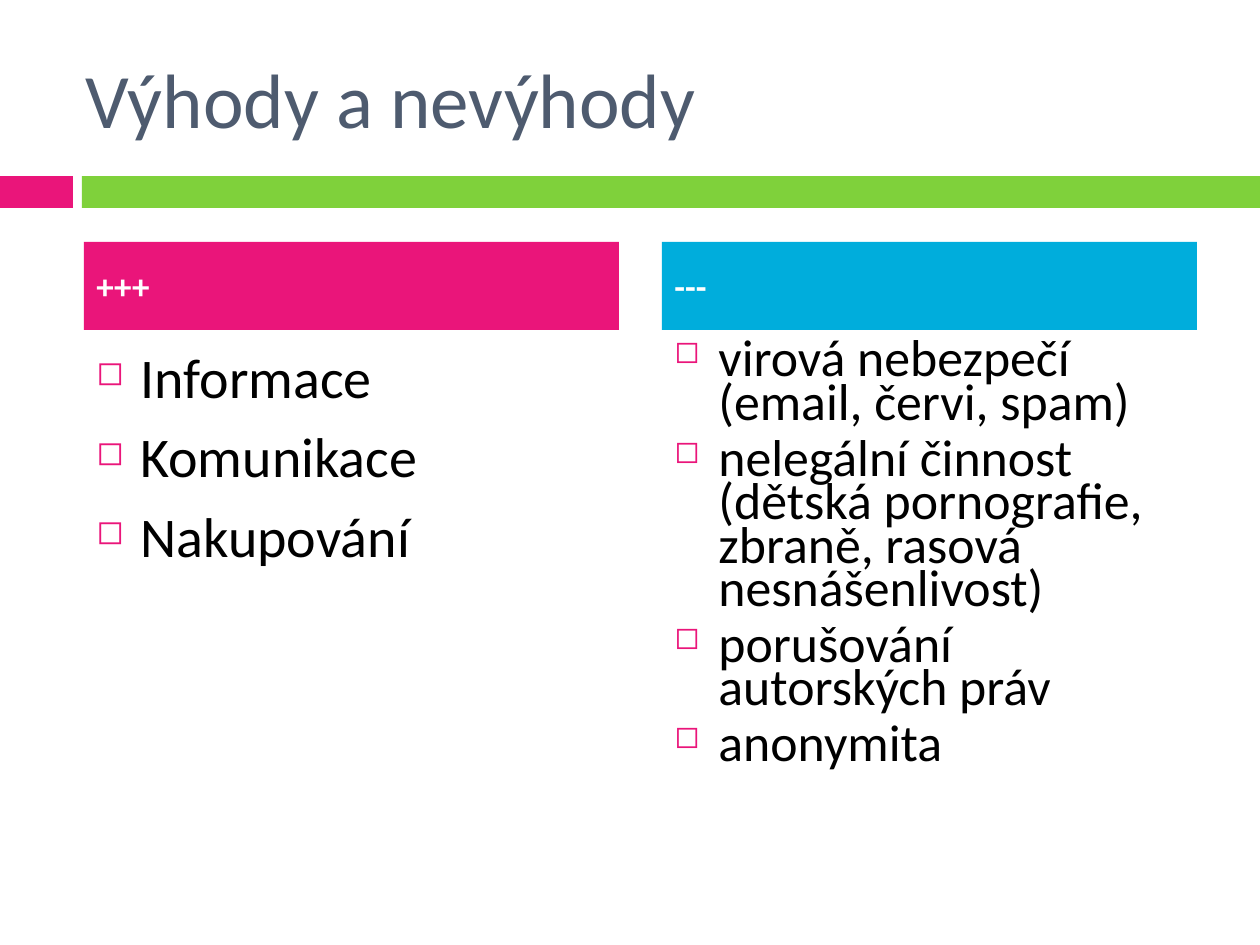
from dataclasses import dataclass

from lxml import etree
from pptx import Presentation
from pptx import util as u
from pptx.dml.color import RGBColor
from pptx.enum import shapes, text
from pptx.oxml.ns import qn

EMU_PER_PX = 914400 / 126
FONT = "Calibri"
PINK = RGBColor(0xEA, 0x15, 0x7A)
GREEN = RGBColor(0x7F, 0xD1, 0x3B)
BLUE = RGBColor(0x00, 0xAD, 0xDC)
SLATE = RGBColor(0x4E, 0x5B, 0x6F)
BLACK = RGBColor(0, 0, 0)
WHITE = RGBColor(255, 255, 255)

COLUMN_WIDTH = 535
HEADER_TOP, HEADER_HEIGHT = 242, 88
BODY_TOP, BODY_HEIGHT = 336, 494
BULLET_INDENT = 44


@dataclass(frozen=True)
class Box:
    left: int
    top: int
    width: int
    height: int

    def emu(self) -> list[int]:
        return [px(side) for side in (self.left, self.top, self.width, self.height)]


@dataclass(frozen=True)
class TextStyle:
    size: float
    color: RGBColor
    bold: bool = False
    space_before: int = 0
    line_spacing: float = 1.0
    bulleted: bool = False


@dataclass(frozen=True)
class Column:
    left: int
    color: RGBColor
    header: str
    items: tuple[str, ...]
    style: TextStyle


TITLE_STYLE = TextStyle(44, SLATE)
HEADER_STYLE = TextStyle(20, WHITE, bold=True, space_before=7)
BARS = (
    (Box(0, 176, 73, 32), PINK),
    (Box(82, 176, 1178, 32), GREEN),
)
COLUMNS = (
    Column(
        84, PINK, "+++",
        ("Informace", "Komunikace", "Nakupování"),
        TextStyle(32, BLACK, space_before=7, bulleted=True),
    ),
    Column(
        662, BLUE, "---",
        (
            "virová nebezpečí (email, červi, spam)",
            "nelegální činnost (dětská pornografie, zbraně, rasová nesnášenlivost)",
            "porušování autorských práv",
            "anonymita",
        ),
        TextStyle(29.6, BLACK, space_before=7, line_spacing=0.7, bulleted=True),
    ),
)


def px(length: int) -> int:
    return round(length * EMU_PER_PX)


def add_bullet(paragraph) -> None:
    properties = paragraph._p.get_or_add_pPr()
    properties.set("marL", str(px(BULLET_INDENT)))
    properties.set("indent", str(-px(BULLET_INDENT)))
    color = etree.SubElement(properties, qn("a:buClr"))
    etree.SubElement(color, qn("a:srgbClr"), val=str(PINK))
    etree.SubElement(properties, qn("a:buSzPct"), val="60000")
    etree.SubElement(properties, qn("a:buChar"), char="◻")


def write_text(shape, lines: tuple[str, ...], style: TextStyle, anchor) -> None:
    frame = shape.text_frame
    frame.word_wrap = True
    frame.vertical_anchor = anchor
    for index, line in enumerate(lines):
        paragraph = frame.add_paragraph() if index else frame.paragraphs[0]
        paragraph.alignment = text.PP_ALIGN.LEFT
        paragraph.space_before = u.Pt(style.space_before)
        paragraph.line_spacing = style.line_spacing
        if style.bulleted:
            add_bullet(paragraph)
        run = paragraph.add_run()
        run.text = line
        run.font.name = FONT
        run.font.size = u.Pt(style.size)
        run.font.bold = style.bold
        run.font.color.rgb = style.color


def add_rectangle(slide, box: Box, color: RGBColor):
    shape = slide.shapes.add_shape(shapes.MSO_SHAPE.RECTANGLE, *box.emu())
    shape.shadow.inherit = False
    shape.fill.solid()
    shape.fill.fore_color.rgb = color
    shape.line.fill.background()
    return shape


def add_column(slide, column: Column) -> None:
    body_box = Box(column.left, BODY_TOP, COLUMN_WIDTH, BODY_HEIGHT)
    body = slide.shapes.add_textbox(*body_box.emu())
    write_text(body, column.items, column.style, text.MSO_ANCHOR.TOP)
    header_box = Box(column.left, HEADER_TOP, COLUMN_WIDTH, HEADER_HEIGHT)
    header = add_rectangle(slide, header_box, column.color)
    write_text(header, (column.header,), HEADER_STYLE, text.MSO_ANCHOR.MIDDLE)


def main() -> None:
    presentation = Presentation()
    presentation.slide_width = px(1260)
    presentation.slide_height = px(945)
    slide = presentation.slides.add_slide(presentation.slide_layouts[6])
    for box, color in BARS:
        add_rectangle(slide, box, color)
    title = slide.shapes.add_textbox(*Box(73, 38, 1124, 120).emu())
    write_text(title, ("Výhody a nevýhody",), TITLE_STYLE, text.MSO_ANCHOR.MIDDLE)
    for column in COLUMNS:
        add_column(slide, column)
    presentation.save("out.pptx")


if __name__ == "__main__":
    main()
